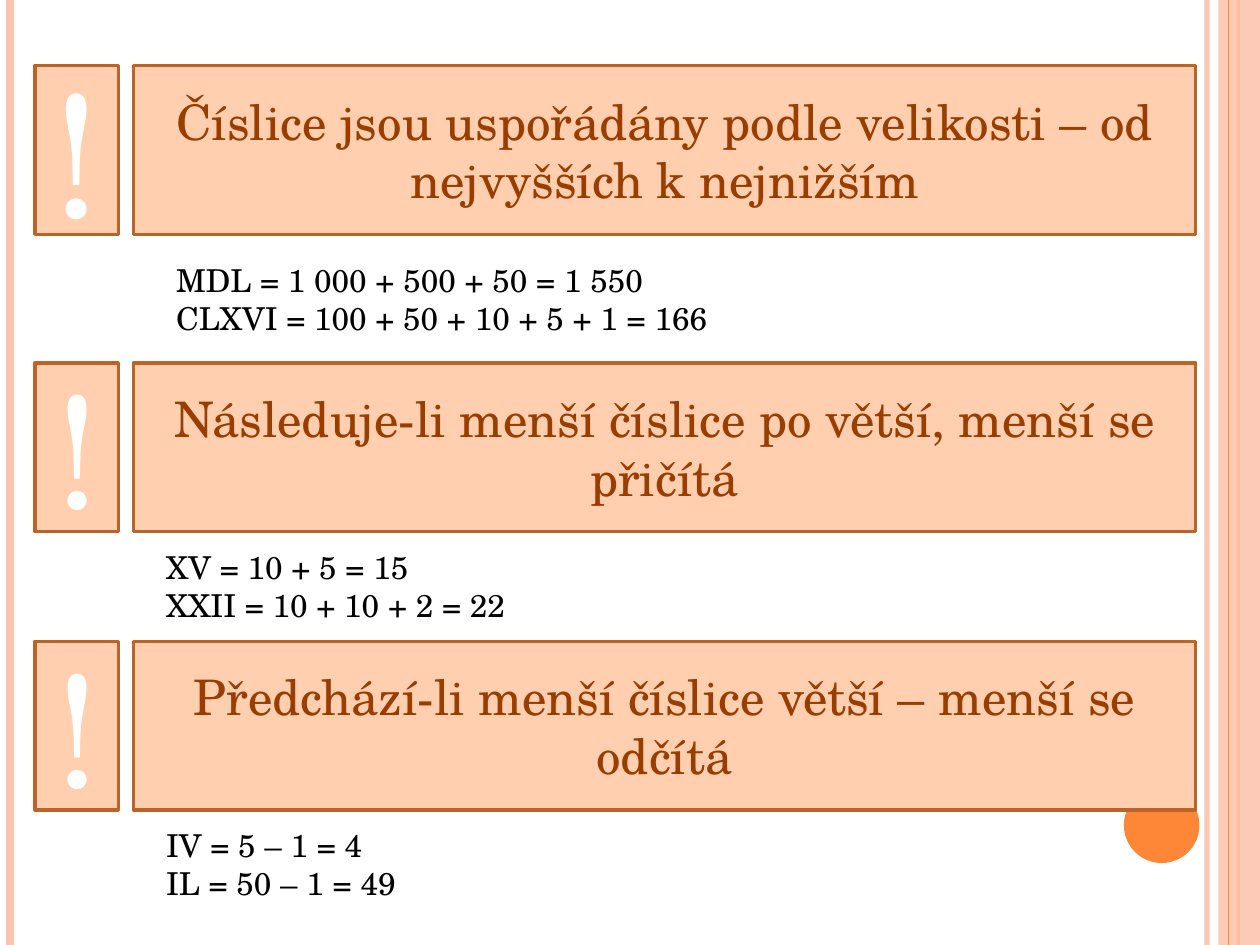
import pptx
import pptx.util
import pptx.dml.color
import pptx.enum.shapes
import pptx.enum.text
import pptx.oxml
import pptx.oxml.ns

Inches = pptx.util.Inches
Pt = pptx.util.Pt
RGBColor = pptx.dml.color.RGBColor
Shape = pptx.enum.shapes.MSO_SHAPE
Align = pptx.enum.text.PP_ALIGN
Anchor = pptx.enum.text.MSO_ANCHOR

PINK = RGBColor(0xFE, 0xC3, 0xAE)
ORANGE = RGBColor(0xFE, 0x86, 0x37)
PEACH = RGBColor(0xFF, 0xCF, 0xAF)
RUST = RGBColor(0xBC, 0x63, 0x29)
BROWN = RGBColor(0x9A, 0x3D, 0x01)
WHITE = RGBColor(0xFF, 0xFF, 0xFF)
BLACK = RGBColor(0, 0, 0)

RULE_FORMAT = {"size": Pt(28), "color": BROWN}
EXAMPLE_FORMAT = {"size": Pt(18), "color": BLACK}

# Each rule: top, text, exclamation mark size, example position and width, examples
RULES = [
    (0.52, "Číslice jsou uspořádány podle velikosti – od nejvyšších k nejnižším", 96,
     (1.3, 2.02, 7.87),
     ["MDL = 1 000 + 500 + 50 = 1 550", "CLXVI = 100 + 50 + 10 + 5 + 1 = 166"]),
    (2.88, "Následuje-li menší číslice po větší, menší se přičítá", 88,
     (1.22, 4.3, 6.38),
     ["XV = 10 + 5 = 15", "XXII = 10 + 10 + 2 = 22"]),
    (5.09, "Předchází-li menší číslice větší – menší se odčítá", 88,
     (1.22, 6.51, 4.8),
     ["IV = 5 – 1 = 4", "IL = 50 – 1 = 49"]),
]


def set_opacity(element, percent):
    """Make the solid colour inside an element partly transparent."""
    color = element.find(".//" + pptx.oxml.ns.qn("a:srgbClr"))
    alpha = pptx.oxml.parse_xml(f'<a:alpha {pptx.oxml.ns.nsdecls("a")} val="{percent * 1000}"/>')
    color.append(alpha)


def add_stripe(page, left, color, width, opacity=100):
    """Draw a vertical line over the full height of the page."""
    stripe = page.shapes.add_connector(
        pptx.enum.shapes.MSO_CONNECTOR.STRAIGHT,
        Inches(left), Inches(0), Inches(left), Inches(7.5))
    stripe.line.color.rgb = color
    stripe.line.width = Pt(width)
    properties = stripe.line._get_or_add_ln()
    if opacity < 100:
        set_opacity(properties, opacity)
    properties.addnext(pptx.oxml.parse_xml(f'<a:effectLst {pptx.oxml.ns.nsdecls("a")}/>'))


def add_filled(page, kind, place, color, outline=None):
    shape = page.shapes.add_shape(kind, *map(Inches, place))
    shape.shadow.inherit = False
    shape.fill.solid()
    shape.fill.fore_color.rgb = color
    if outline is None:
        shape.line.fill.background()
    else:
        shape.line.color.rgb = outline
        shape.line.width = Pt(2)
    return shape


def write_lines(frame, lines, text_format, align):
    frame.word_wrap = True
    for index, text in enumerate(lines):
        para = frame.paragraphs[0] if index == 0 else frame.add_paragraph()
        para.alignment = align
        span = para.add_run()
        span.text = text
        span.font.name = "TeX Gyre Schola"
        for name, value in text_format.items():
            if name == "color":
                span.font.color.rgb = value
            else:
                setattr(span.font, name, value)


def add_panel(page, left, top, width, text, text_format):
    box = add_filled(page, Shape.RECTANGLE, (left, top, width, 1.34), PEACH, RUST)
    box.text_frame.vertical_anchor = Anchor.MIDDLE
    write_lines(box.text_frame, [text], text_format, Align.CENTER)


def add_examples(page, left, top, width, lines):
    box = page.shapes.add_textbox(Inches(left), Inches(top), Inches(width), Inches(0.71))
    write_lines(box.text_frame, lines, EXAMPLE_FORMAT, Align.LEFT)
    box.text_frame.auto_size = pptx.enum.text.MSO_AUTO_SIZE.SHAPE_TO_FIT_TEXT


def add_decoration(page):
    add_stripe(page, 9.58, PINK, 3, 93)
    add_stripe(page, 0.08, PINK, 4.5)
    add_stripe(page, 9.83, ORANGE, 1.5)
    band = add_filled(page, Shape.RECTANGLE, (9.67, 0, 0.33, 7.5), PINK)
    set_opacity(band.fill._xPr, 87)
    add_stripe(page, 9.75, ORANGE, 0.75)
    add_filled(page, Shape.OVAL, (8.92, 6.25, 0.6, 0.6), ORANGE)


def main():
    deck = pptx.Presentation()
    deck.slide_width, deck.slide_height = Inches(10), Inches(7.5)
    page = deck.slides.add_slide(deck.slide_layouts[6])

    # Side stripes and corner disc
    add_decoration(page)

    # Three rules, each with its mark and examples
    for top, rule, mark_size, place, examples in RULES:
        add_panel(page, 1.06, top, 8.43, rule, RULE_FORMAT)
        add_panel(page, 0.28, top, 0.66, "!", {"size": Pt(mark_size), "color": WHITE})
        add_examples(page, *place, examples)

    deck.save("out.pptx")


if __name__ == "__main__":
    main()
